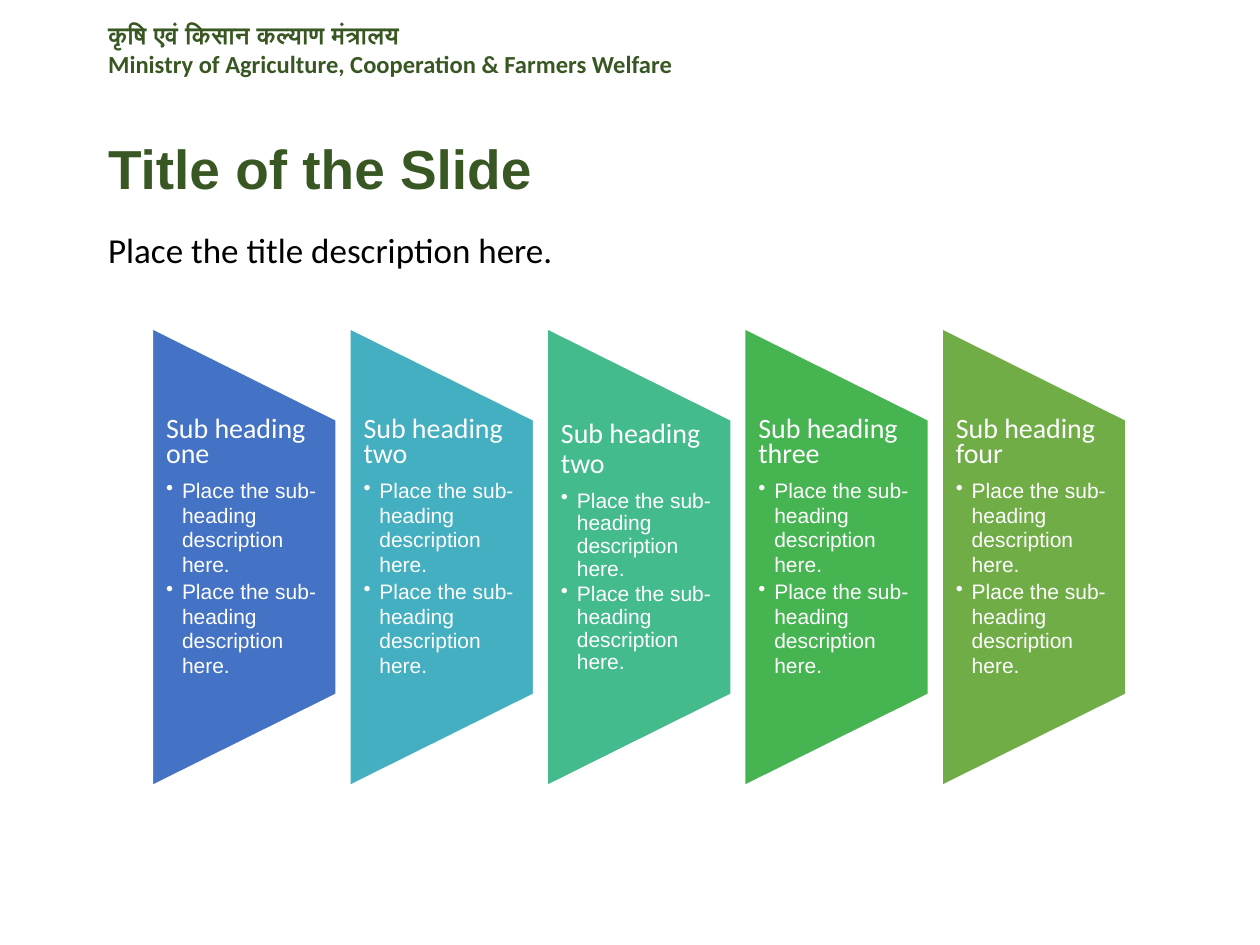
from dataclasses import dataclass

from lxml.etree import SubElement
from pptx import Presentation
from pptx.dml.color import RGBColor
from pptx.enum.shapes import MSO_SHAPE
from pptx.oxml.ns import qn
from pptx.util import Cm, Pt


@dataclass(frozen=True)
class Theme:
    green: str = "385723"
    black: str = "000000"
    white: str = "FFFFFF"
    bands: tuple = ("4472C4", "43AFC0", "43BB8D", "45B451", "70AD47")
    sans: str = "Calibri"
    arial: str = "Arial"
    head: float = 14
    title: float = 31.4
    lead: float = 20
    sub: float = 16
    body: float = 12


theme = Theme()


def add_box(shapes, x, y, w, h):
    frame = shapes.add_textbox(Cm(x), Cm(y), Cm(w), Cm(h)).text_frame
    frame.word_wrap = True
    return frame


def add_run(para, text, size, face, color, bold=False):
    run = para.add_run()
    run.text = text
    font = run.font
    font.size, font.name, font.bold = Pt(size), face, bold
    font.color.rgb = RGBColor.from_string(color)


deck = Presentation()
deck.slide_width, deck.slide_height = Cm(25.4), Cm(19.05)
slide = deck.slides.add_slide(deck.slide_layouts[6])
left = 1.93

# Ministry name
frame = add_box(slide.shapes, left, 0.28, 12.93, 2.06)
add_run(frame.paragraphs[0], "कृषि एवं किसान कल्याण मंत्रालय",
        theme.head, theme.sans, theme.green, True)
add_run(frame.add_paragraph(), "Ministry of Agriculture, Cooperation & Farmers Welfare",
        theme.head, theme.sans, theme.green, True)

# Title and description
para = add_box(slide.shapes, left, 2.95, 11.68, 1.19).paragraphs[0]
para.line_spacing = 0.7
add_run(para, "Title of the Slide", theme.title, theme.arial, theme.green, True)
para = add_box(slide.shapes, left, 4.57, 13.69, 0.94).paragraphs[0]
para.line_spacing = 0.9
add_run(para, "Place the title description here.", theme.lead, theme.sans, theme.black)

# Five bands: a trapezoid turned on its side, with text over it
wide, tall, step = 3.71, 9.22, 3.98
start, mid = 3.07, 11.23
group = slide.shapes.add_group_shape()
names = ("one", "two", "two", "three", "four")
for i, (name, color) in enumerate(zip(names, theme.bands)):
    x = start + i * step
    band = group.shapes.add_shape(
        MSO_SHAPE.FLOWCHART_MANUAL_OPERATION,
        Cm(x + (wide - tall) / 2), Cm(mid - wide / 2), Cm(tall), Cm(wide))
    band.rotation = 270
    band.shadow.inherit = False
    band.fill.solid()
    band.fill.fore_color.rgb = RGBColor.from_string(color)
    band.line.color.rgb = RGBColor.from_string(theme.white)
    band.line.width = Pt(1)

    # Sub heading; the middle band has looser lines
    frame = add_box(group.shapes, x, 8.46, wide, 5.53)
    frame.margin_left = frame.margin_right = Cm(0.28)
    frame.margin_top = frame.margin_bottom = 0
    lines = 0.9 if i == 2 else Pt(14)
    para = frame.paragraphs[0]
    para.line_spacing = lines
    para.space_after = Pt(0.35 * theme.sub)
    add_run(para, f"Sub heading {name}", theme.sub, theme.sans, theme.white)

    # Bullets
    for _ in range(2):
        para = frame.add_paragraph()
        para.level = 1
        para.line_spacing = lines
        para.space_after = Pt(0.15 * theme.body)
        props = para._p.get_or_add_pPr()
        props.set("marL", str(Cm(0.32)))
        props.set("indent", str(-Cm(0.32)))
        SubElement(props, qn("a:buChar")).set("char", "•")
        add_run(para, "Place the sub-heading description here.",
                theme.body, theme.arial, theme.white)

deck.save("out.pptx")
